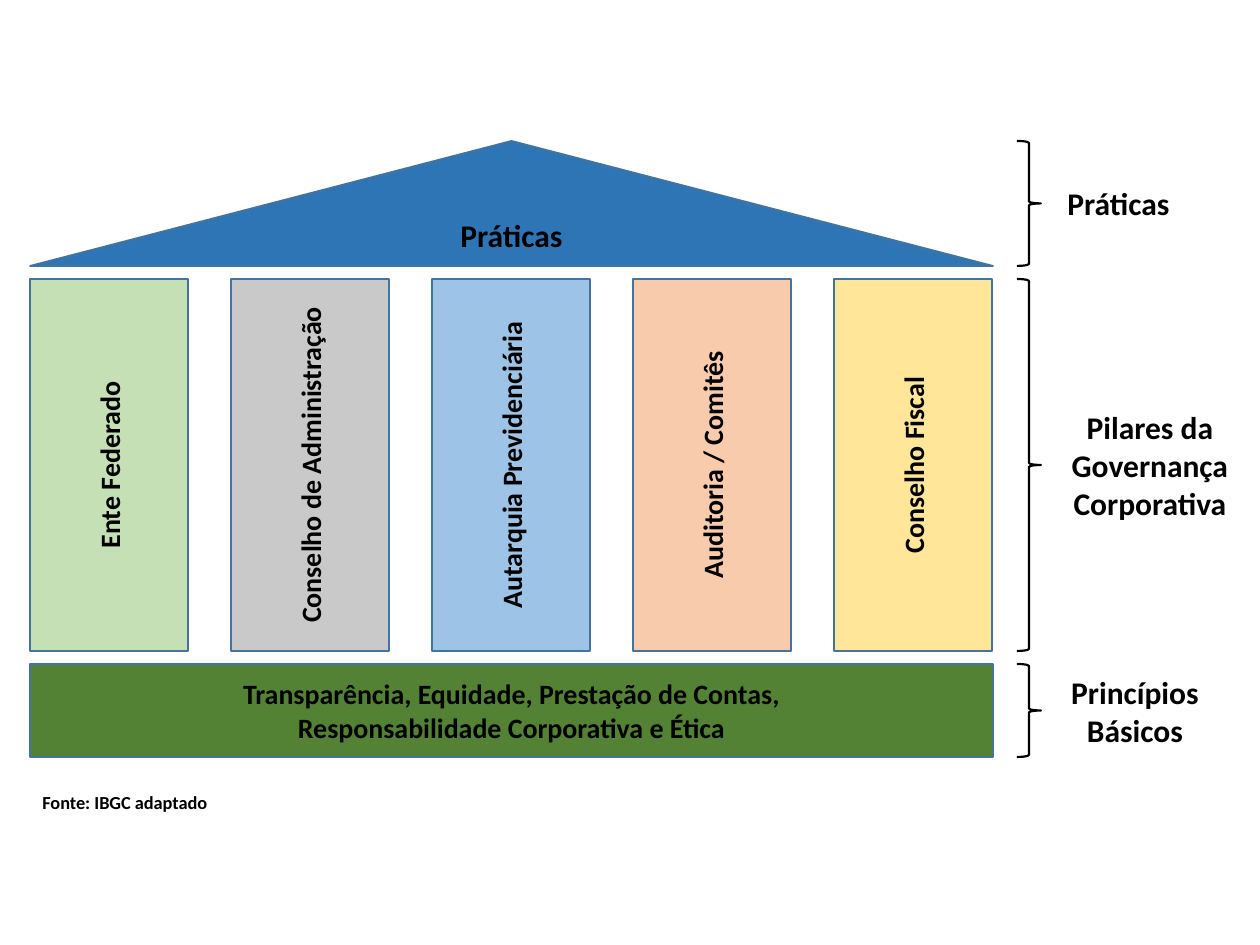
from pptx import Presentation
from pptx.dml.color import RGBColor
from pptx.enum.shapes import MSO_SHAPE
from pptx.enum.text import MSO_ANCHOR, PP_ALIGN
from pptx.util import Pt

EMU_PER_PX = 914400 / 126
TRIANGLE = MSO_SHAPE.ISOSCELES_TRIANGLE
PROCESS = MSO_SHAPE.FLOWCHART_PROCESS
BRACE = MSO_SHAPE.RIGHT_BRACE
MIDDLE = MSO_ANCHOR.MIDDLE
LEFT, CENTER = PP_ALIGN.LEFT, PP_ALIGN.CENTER
BLANK_LAYOUT = 6

COLORS = {
    "text": "000000",
    "outline": "43739E",
    "roof": "2E75B6",
    "base": "548235",
    "green": "C5E0B4",
    "gray": "C9C9C9",
    "blue": "9DC3E6",
    "orange": "F8CBAD",
    "yellow": "FFE699",
}

TEMPLE_LEFT, TEMPLE_WIDTH = 30, 963
PILLAR_WIDTH, PILLAR_PITCH = 158, 201
BRACE_LEFT, BRACE_WIDTH = 1017, 24
LABEL_LEFT = 1055
ROOF = (141, 125)  # top, height of each level
PILLARS = (279, 372)
BASE = (664, 93)

PILLAR_ITEMS = [
    ("Ente Federado", "green"),
    ("Conselho de Administração", "gray"),
    ("Autarquia Previdenciária", "blue"),
    ("Auditoria / Comitês", "orange"),
    ("Conselho Fiscal", "yellow"),
]
# level, label, label top, width, height, alignment
LEVELS = [
    (ROOF, "Práticas", 178, 160, 50, LEFT),
    (PILLARS, "Pilares da Governança Corporativa", 402, 190, 127, CENTER),
    (BASE, "Princípios Básicos", 667, 160, 89, CENTER),
]


def px(length):
    return round(length * EMU_PER_PX)


def color(name):
    return RGBColor.from_string(COLORS[name])


class TempleSlide:
    """Holds the text style and the slide being drawn."""

    def __init__(self, slide, font="Calibri"):
        self.slide = slide
        self.font = font

    def set_text(self, shape, text, size, align):
        frame = shape.text_frame
        frame.word_wrap = True
        frame.text = text
        for para in frame.paragraphs:
            para.alignment = align
            for span in para.runs:
                span.font.name = self.font
                span.font.size = Pt(size)
                span.font.bold = True
                span.font.color.rgb = color("text")

    def outlined(self, kind, left, top, width, height, line, weight):
        shape = self.slide.shapes.add_shape(
            kind, px(left), px(top), px(width), px(height))
        shape.shadow.inherit = False
        shape.line.color.rgb = color(line)
        shape.line.width = Pt(weight)
        return shape

    def block(self, kind, left, top, width, height, fill, text, size, vertical=False):
        shape = self.outlined(kind, left, top, width, height, "outline", 1)
        shape.fill.solid()
        shape.fill.fore_color.rgb = color(fill)
        self.set_text(shape, text, size, CENTER)
        shape.text_frame.vertical_anchor = MIDDLE
        if vertical:
            shape.element.txBody.bodyPr.set("vert", "vert270")

    def brace(self, top, height):
        shape = self.outlined(
            BRACE, BRACE_LEFT, top, BRACE_WIDTH, height, "text", 1.25)
        shape.fill.background()

    def label(self, left, top, width, height, text, size, align):
        box = self.slide.shapes.add_textbox(
            px(left), px(top), px(width), px(height))
        self.set_text(box, text, size, align)


def main():
    deck = Presentation()
    deck.slide_width, deck.slide_height = px(1260), px(945)
    page = TempleSlide(deck.slides.add_slide(deck.slide_layouts[BLANK_LAYOUT]))

    top, height = ROOF
    page.block(TRIANGLE, TEMPLE_LEFT, top, TEMPLE_WIDTH, height,
               "roof", "Práticas", 18)
    top, height = PILLARS
    for index, (name, fill) in enumerate(PILLAR_ITEMS):
        page.block(PROCESS, TEMPLE_LEFT + index * PILLAR_PITCH, top,
                   PILLAR_WIDTH, height, fill, name, 16, vertical=True)
    top, height = BASE
    page.block(PROCESS, TEMPLE_LEFT, top, TEMPLE_WIDTH, height, "base",
               "Transparência, Equidade, Prestação de Contas,\n"
               "Responsabilidade Corporativa e Ética", 16)

    for level, text, label_top, label_width, label_height, align in LEVELS:
        page.brace(*level)
        page.label(LABEL_LEFT, label_top, label_width, label_height,
                   text, 18, align)
    page.label(TEMPLE_LEFT, 785, 200, 37, "Fonte: IBGC adaptado", 10.5, LEFT)

    deck.save("out.pptx")


if __name__ == "__main__":
    main()
